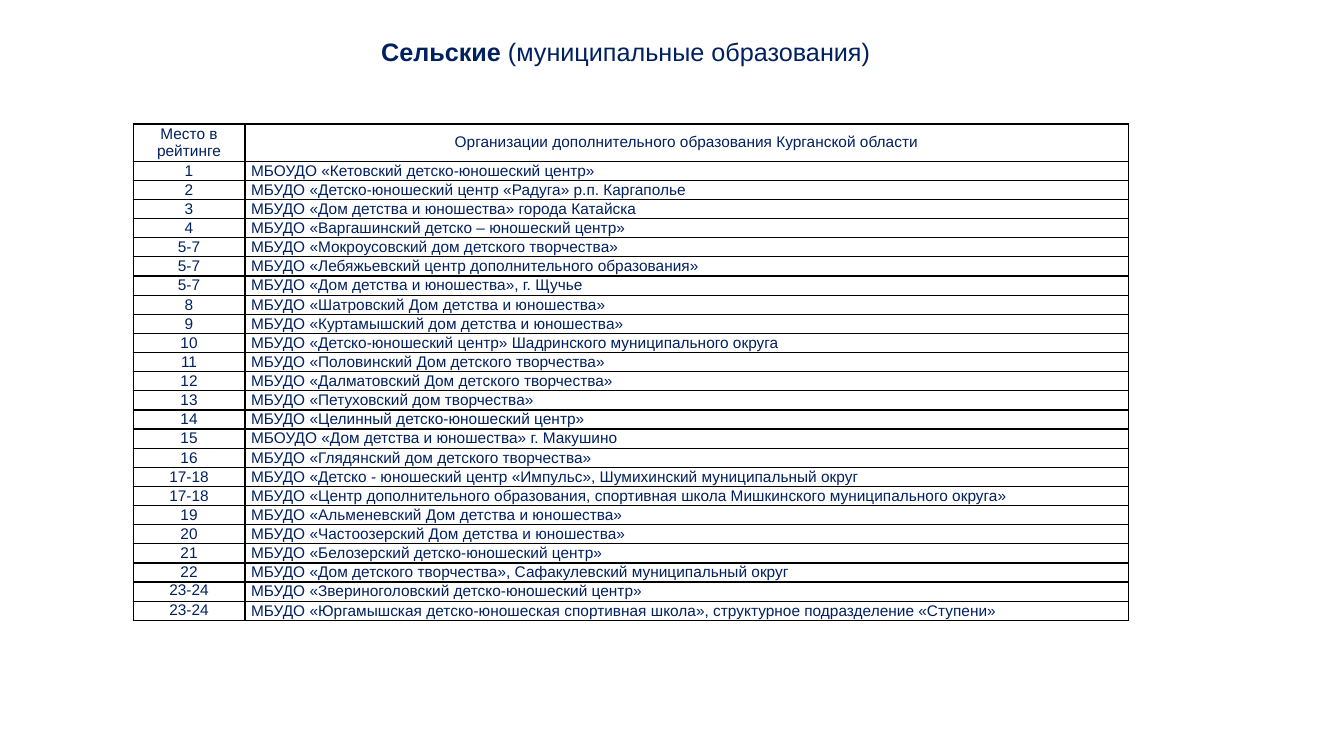
from typing import NamedTuple

from lxml import etree
from pptx import Presentation
from pptx import util as u
from pptx.dml.color import RGBColor
from pptx.enum import text
from pptx.oxml import ns

NAVY = RGBColor(0x00, 0x20, 0x60)
BLACK = RGBColor(0x00, 0x00, 0x00)

SLIDE_W, SLIDE_H = u.Inches(13.33), u.Inches(7.5)
GRID_COLS, GRID_ROWS = 1333, 750

CENTER, LEFT, JUSTIFY = text.PP_ALIGN.CENTER, text.PP_ALIGN.LEFT, text.PP_ALIGN.JUSTIFY
MIDDLE, TOP = text.MSO_ANCHOR.MIDDLE, text.MSO_ANCHOR.TOP

TITLE_FRAME = {
    "word_wrap": False,
    "auto_size": text.MSO_AUTO_SIZE.SHAPE_TO_FIT_TEXT,
    "vertical_anchor": TOP,
    "margin_left": u.Inches(0.1),
    "margin_right": u.Inches(0.1),
    "margin_top": u.Inches(0.05),
    "margin_bottom": u.Inches(0.05),
}
CELL_MARGINS = {
    "margin_left": u.Inches(0.06),
    "margin_right": u.Inches(0.06),
    "margin_top": 0,
    "margin_bottom": 0,
}
TITLE_FONT = {"name": "Arial", "size": u.Pt(18)}
CELL_FONT = {"name": "Arial", "size": u.Pt(11)}
PLAIN_TABLE = {"first_row": False, "horz_banding": False}


class Box(NamedTuple):
    col: int
    row: int
    cols: int
    rows: int


class Entry(NamedTuple):
    place: str
    centre: str
    align: text.PP_ALIGN = LEFT
    place_anchor: text.MSO_ANCHOR = MIDDLE


TITLE_BOX = Box(368, 31, 510, 40)
TABLE_BOX = Box(132, 123, 987, 493)
PLACE_COLS = 111
HEADER_ROWS, ENTRY_ROWS = 37, 19

ENTRIES = [
    Entry("Место в рейтинге", "Организации дополнительного образования Курганской области", CENTER),
    Entry("1", "МБОУДО «Кетовский детско-юношеский центр»"),
    Entry("2", "МБУДО «Детско-юношеский центр «Радуга» р.п. Каргаполье"),
    Entry("3", "МБУДО «Дом детства и юношества» города Катайска"),
    Entry("4", "МБУДО «Варгашинский детско – юношеский центр»"),
    Entry("5-7", "МБУДО «Мокроусовский дом детского творчества»"),
    Entry("5-7", "МБУДО «Лебяжьевский центр дополнительного образования»"),
    Entry("5-7", "МБУДО «Дом детства и юношества», г. Щучье"),
    Entry("8", "МБУДО «Шатровский Дом детства и юношества»"),
    Entry("9", "МБУДО «Куртамышский дом детства и юношества»"),
    Entry("10", "МБУДО «Детско-юношеский центр» Шадринского муниципального округа"),
    Entry("11", "МБУДО «Половинский Дом детского творчества»"),
    Entry("12", "МБУДО «Далматовский Дом детского творчества»"),
    Entry("13", "МБУДО «Петуховский дом творчества»"),
    Entry("14", "МБУДО «Целинный детско-юношеский центр»"),
    Entry("15", "МБОУДО «Дом детства и юношества» г. Макушино"),
    Entry("16", "МБУДО «Глядянский дом детского творчества»"),
    Entry("17-18", "МБУДО «Детско - юношеский центр «Импульс», Шумихинский муниципальный округ"),
    Entry("17-18", "МБУДО «Центр дополнительного образования, спортивная школа "
                   "Мишкинского муниципального округа»", JUSTIFY),
    Entry("19", "МБУДО «Альменевский Дом детства и юношества»"),
    Entry("20", "МБУДО «Частоозерский Дом детства и юношества»"),
    Entry("21", "МБУДО «Белозерский детско-юношеский центр»"),
    Entry("22", "МБУДО «Дом детского творчества», Сафакулевский муниципальный округ", JUSTIFY),
    Entry("23-24", "МБУДО «Звериноголовский детско-юношеский центр»", LEFT, TOP),
    Entry("23-24", "МБУДО «Юргамышская детско-юношеская спортивная школа», "
                   "структурное подразделение «Ступени»", JUSTIFY, TOP),
]


def across(cols: int) -> int:
    return round(SLIDE_W * cols / GRID_COLS)


def down(rows: int) -> int:
    return round(SLIDE_H * rows / GRID_ROWS)


def place(box: Box) -> tuple[int, int, int, int]:
    return across(box.col), down(box.row), across(box.cols), down(box.rows)


def apply(target, values: dict) -> None:
    for name, value in values.items():
        setattr(target, name, value)


def add_run(p, words: str, font: dict) -> None:
    r = p.add_run()
    r.text = words
    apply(r.font, font)
    r.font.color.rgb = NAVY


def draw_title(sp) -> None:
    sp.left, sp.top, sp.width, sp.height = place(TITLE_BOX)
    tf = sp.text_frame
    apply(tf, TITLE_FRAME)
    p = tf.paragraphs[0]
    apply(p, {"alignment": LEFT, "line_spacing": 1.0, "space_before": u.Pt(0)})
    add_run(p, "Сельские", TITLE_FONT | {"bold": True})
    add_run(p, " (муниципальные образования)", TITLE_FONT | {"bold": False})


def draw_borders(cell) -> None:
    props = cell._tc.get_or_add_tcPr()
    for i, side in enumerate(("lnL", "lnR", "lnT", "lnB")):
        line = etree.Element(ns.qn(f"a:{side}"), w=str(u.Pt(1)))
        fill = etree.SubElement(line, ns.qn("a:solidFill"))
        etree.SubElement(fill, ns.qn("a:srgbClr"), val=str(BLACK))
        props.insert(i, line)


def draw_cell(cell, words: str, align: text.PP_ALIGN, anchor: text.MSO_ANCHOR) -> None:
    apply(cell, CELL_MARGINS | {"vertical_anchor": anchor})
    cell.fill.background()
    draw_borders(cell)
    p = cell.text_frame.paragraphs[0]
    p.alignment = align
    add_run(p, words, CELL_FONT)


def draw_ranking(s) -> None:
    table = s.shapes.add_table(len(ENTRIES), 2, *place(TABLE_BOX)).table
    apply(table, PLAIN_TABLE)
    for column, cols in zip(table.columns, (PLACE_COLS, TABLE_BOX.cols - PLACE_COLS)):
        column.width = across(cols)
    for i, entry in enumerate(ENTRIES):
        table.rows[i].height = down(ENTRY_ROWS if i else HEADER_ROWS)
        draw_cell(table.cell(i, 0), entry.place, CENTER, entry.place_anchor)
        draw_cell(table.cell(i, 1), entry.centre, entry.align, MIDDLE)


def main() -> None:
    prs = Presentation()
    prs.slide_width, prs.slide_height = SLIDE_W, SLIDE_H
    s = prs.slides.add_slide(prs.slide_layouts[5])
    draw_title(s.shapes.title)
    draw_ranking(s)
    prs.save("out.pptx")


if __name__ == "__main__":
    main()
